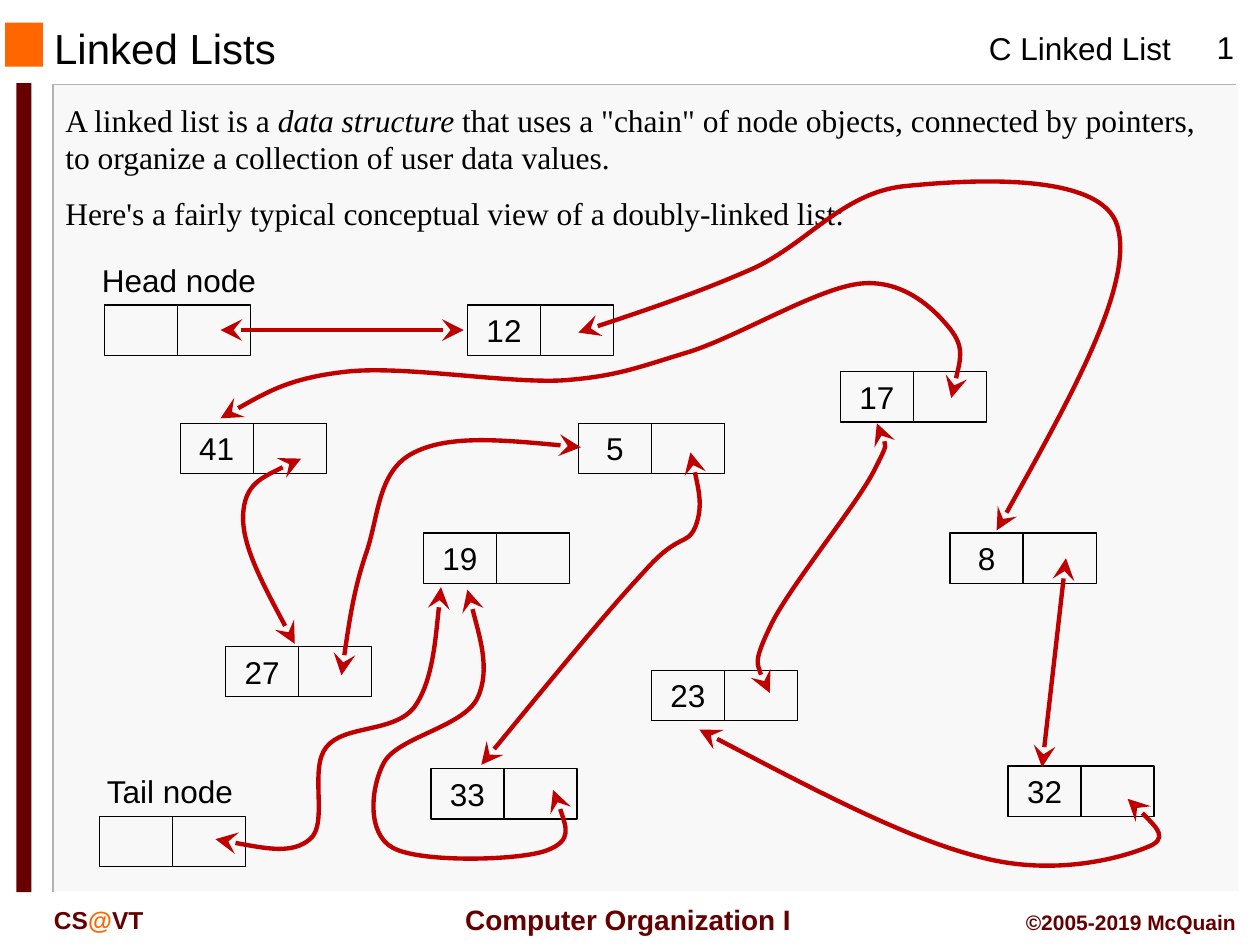
from dataclasses import dataclass

import lxml.etree
import pptx
import pptx.dml.color
import pptx.enum.shapes
import pptx.enum.text
import pptx.oxml.ns
import pptx.util

Inches = pptx.util.Inches
Align = pptx.enum.text.PP_ALIGN
Anchor = pptx.enum.text.MSO_ANCHOR
Rectangle = pptx.enum.shapes.MSO_SHAPE.RECTANGLE
Point = tuple[float, float]


@dataclass(frozen=True)
class Theme:
    sans: str = "Arial"
    serif: str = "Times New Roman"
    ink: str = "000000"
    maroon: str = "660000"
    orange: str = "FF6600"
    panel: str = "F8F8F8"
    shade: str = "B2B2B2"
    light: str = "FFFFFF"
    pointer: str = "C00000"
    title_size: float = 24
    body_size: float = 18
    course_size: float = 16
    school_size: float = 14
    credit_size: float = 12
    cell_line: float = 0.75
    frame_line: float = 1
    pointer_line: float = 2.5


@dataclass(frozen=True)
class Run:
    text: str
    color: str | None = None
    italic: bool = False


@dataclass(frozen=True)
class Node:
    left: float
    top: float
    value: str = ""


@dataclass(frozen=True)
class Caption:
    text: str
    left: float
    top: float


THEME = Theme()
CELL_WIDTH, CELL_HEIGHT = 0.58, 0.4

SENTINELS = [
    (Node(0.83, 2.42), Caption("Head node", 0.71, 2.02)),
    (Node(0.79, 6.48), Caption("Tail node", 0.75, 6.08)),
]
NODES = [
    Node(1.43, 3.36, "41"), Node(8, 6.08, "32"), Node(6.67, 2.95, "17"),
    Node(3.36, 4.23, "19"), Node(3.71, 2.42, "12"), Node(3.42, 6.1, "33"),
    Node(4.59, 3.36, "5"), Node(5.17, 5.32, "23"), Node(7.54, 4.23, "8"),
    Node(1.79, 5.13, "27"),
]
STRAIGHT_POINTERS = [((1.75, 2.62), (3.68, 2.62)), ((8.46, 4.43), (8.27, 6.09))]
# Each curve is a start point, then two control points and an end point per segment.
CURVED_POINTERS = {
    "12 to 8": [(4.59, 2.64), (5.07, 2.48), (5.55, 2.32), (5.98, 2.13),
                (6.41, 1.93), (6.68, 1.54), (7.16, 1.48), (7.64, 1.43),
                (8.75, 1.35), (8.87, 1.8), (9, 2.26), (8.45, 3.24), (7.91, 4.21)],
    "32 to 23": [(8.95, 6.34), (9.12, 6.5), (9.29, 6.66), (9.09, 6.73),
                 (8.89, 6.81), (8.36, 6.96), (7.77, 6.8), (7.18, 6.65),
                 (6.37, 6.22), (5.55, 5.79)],
    "23 to 17": [(6.11, 5.5), (6.04, 5.39), (5.97, 5.27), (6.11, 4.98),
                 (6.24, 4.69), (6.79, 4.02), (6.93, 3.75), (7.07, 3.48),
                 (7.02, 3.42), (6.96, 3.36)],
    "17 to 41": [(7.55, 3.16), (7.6, 2.96), (7.66, 2.76), (7.54, 2.61),
                 (7.42, 2.46), (7.18, 2.22), (6.84, 2.25), (6.5, 2.28),
                 (5.88, 2.66), (5.48, 2.79), (5.08, 2.91), (4.9, 2.99),
                 (4.45, 3.02), (3.99, 3.04), (3.2, 2.9), (2.75, 2.95),
                 (2.3, 3), (2.03, 3.16), (1.75, 3.32)],
    "41 to 27": [(2.39, 3.64), (2.17, 3.74), (1.94, 3.84), (1.93, 4.09),
                 (1.92, 4.33), (2.13, 4.72), (2.34, 5.11)],
    "27 to 5": [(2.71, 5.36), (2.76, 5.01), (2.81, 4.67), (2.91, 4.38),
                (3.01, 4.08), (3, 3.73), (3.29, 3.59), (3.57, 3.45),
                (4.09, 3.5), (4.61, 3.55)],
    "5 to 33": [(5.48, 3.59), (5.53, 3.8), (5.58, 4.02), (5.52, 4.18),
                (5.45, 4.34), (5.39, 4.22), (5.11, 4.54), (4.82, 4.85),
                (4.32, 5.46), (3.82, 6.07)],
    "33 to 19": [(4.39, 6.27), (4.47, 6.47), (4.55, 6.67), (4.34, 6.75),
                 (4.13, 6.83), (3.34, 6.85), (3.12, 6.73), (2.91, 6.62),
                 (2.94, 6.25), (3.05, 6.05), (3.16, 5.85), (3.68, 5.77),
                 (3.79, 5.54), (3.9, 5.31), (3.71, 4.68), (3.71, 4.68)],
    "tail to 19": [(1.71, 6.66), (2.02, 6.72), (2.32, 6.78), (2.46, 6.66),
                   (2.61, 6.54), (2.45, 6.1), (2.59, 5.93), (2.73, 5.75),
                   (3.13, 5.82), (3.29, 5.61), (3.44, 5.4), (3.5, 4.66), (3.5, 4.66)],
}


def rgb(color: str):
    return pptx.dml.color.RGBColor.from_string(color)


def write(shape, *paragraphs: list[Run], size: float = THEME.body_size,
          font: str = THEME.sans, color: str = THEME.ink, bold: bool = False,
          align=Align.LEFT, anchor=Anchor.TOP, wrap: bool = True, gap: float = 0) -> None:
    """Fill a shape with paragraphs of runs; gap is the space between paragraphs."""
    frame = shape.text_frame
    frame.word_wrap = wrap
    frame.auto_size = pptx.enum.text.MSO_AUTO_SIZE.NONE
    frame.vertical_anchor = anchor
    for index, runs in enumerate(paragraphs):
        paragraph = frame.add_paragraph() if index else frame.paragraphs[0]
        paragraph.alignment = align
        paragraph.space_before = pptx.util.Pt(gap if index else 0)
        for part in runs:
            run = paragraph.add_run()
            run.text = part.text
            run.font.name, run.font.size = font, pptx.util.Pt(size)
            run.font.bold, run.font.italic = bold, part.italic
            run.font.color.rgb = rgb(part.color or color)


def add_label(shapes, box: tuple, *paragraphs: list[Run], **text_format) -> None:
    write(shapes.add_textbox(*map(Inches, box)), *paragraphs, **text_format)


def set_line(shape, color: str, width: float) -> None:
    shape.line.color.rgb = rgb(color)
    shape.line.width = pptx.util.Pt(width)


def add_block(shapes, box: tuple, fill: str | None = None):
    block = shapes.add_shape(Rectangle, *map(Inches, box))
    block.shadow.inherit = False
    if fill:
        block.fill.solid()
        block.fill.fore_color.rgb = rgb(fill)
        block.line.fill.background()
    else:
        block.fill.background()
        set_line(block, THEME.ink, THEME.cell_line)
    return block


def add_outline(shapes, points: list[Point], color: str, width: float):
    start, *rest = [(Inches(x), Inches(y)) for x, y in points]
    builder = shapes.build_freeform(*start)
    builder.add_line_segments(rest, close=False)
    outline = builder.convert_to_shape()
    outline.shadow.inherit = False
    outline.fill.background()
    set_line(outline, color, width)
    return outline


def add_arrowheads(shape) -> None:
    line = shape.element.spPr.get_or_add_ln()
    for end in ("a:headEnd", "a:tailEnd"):
        lxml.etree.SubElement(line, pptx.oxml.ns.qn(end), type="stealth", w="lg", len="lg")


def add_straight_pointer(shapes, start: Point, end: Point) -> None:
    pointer = shapes.add_connector(pptx.enum.shapes.MSO_CONNECTOR.STRAIGHT,
                                   *map(Inches, (*start, *end)))
    set_line(pointer, THEME.pointer, THEME.pointer_line)
    add_arrowheads(pointer)
    lxml.etree.SubElement(pointer.element.spPr, pptx.oxml.ns.qn("a:effectLst"))


def add_curved_pointer(shapes, points: list[Point]) -> None:
    """Turn every three line segments of an outline into one Bézier segment."""
    pointer = add_outline(shapes, points, THEME.pointer, THEME.pointer_line)
    segments = list(pointer.element.iter(pptx.oxml.ns.qn("a:lnTo")))
    route = segments[0].getparent()
    for first in range(0, len(segments), 3):
        bezier = lxml.etree.SubElement(route, pptx.oxml.ns.qn("a:cubicBezTo"))
        for segment in segments[first:first + 3]:
            bezier.append(segment[0])
            route.remove(segment)
    add_arrowheads(pointer)


def add_node(shapes, node: Node, caption: Caption | None = None) -> None:
    group = shapes.add_group_shape().shapes
    for column, text in enumerate((node.value, "")):
        cell = add_block(group, (node.left + column * CELL_WIDTH, node.top,
                                 CELL_WIDTH, CELL_HEIGHT))
        if text:
            write(cell, [Run(text)], align=Align.CENTER)
    if caption:
        add_label(group, (caption.left, caption.top, 1.58, 0.4), [Run(caption.text)])


def add_frame(shapes) -> None:
    add_block(shapes, (0.43, 0.67, 9.4, 6.41), THEME.panel)
    add_outline(shapes, [(9.81, 0.67), (0.42, 0.67), (0.42, 7.08)], THEME.shade, THEME.frame_line)
    add_outline(shapes, [(9.83, 0.67), (9.83, 7.08), (0.44, 7.08)], THEME.light, THEME.frame_line)
    add_block(shapes, (0.04, 0.18, 0.3, 0.35), THEME.orange)
    add_block(shapes, (0.13, 0.66, 0.12, 6.42), THEME.maroon)
    add_label(shapes, (7.75, 0.18, 1.66, 0.4), [Run("C Linked List")], wrap=False)
    add_label(shapes, (9.39, 0.17, 0.67, 0.4), [Run("1")], align=Align.CENTER)
    add_label(shapes, (3.53, 7.11, 2.91, 0.37), [Run("Computer Organization I")],
              size=THEME.course_size, color=THEME.maroon, bold=True,
              align=Align.CENTER, anchor=Anchor.MIDDLE, wrap=False)
    add_label(shapes, (0.33, 7.13, 1.5, 0.33), [Run("CS"), Run("@", THEME.orange), Run("VT")],
              size=THEME.school_size, color=THEME.maroon, bold=True)
    add_label(shapes, (7.83, 7.17, 2.08, 0.3), [Run("©2005-2019 McQuain")],
              size=THEME.credit_size, color=THEME.maroon, bold=True, align=Align.RIGHT)


def main() -> None:
    deck = pptx.Presentation()
    deck.slide_width, deck.slide_height = Inches(10), Inches(7.5)
    slide = deck.slides.add_slide(deck.slide_layouts[5])
    shapes = slide.shapes
    add_frame(shapes)
    title = shapes.title
    title.left, title.top, title.width, title.height = map(Inches, (0.33, 0.19, 6.33, 0.38))
    write(title, [Run("Linked Lists")], size=THEME.title_size, anchor=Anchor.MIDDLE)
    add_label(shapes, (0.42, 0.75, 9.42, 1.16),
              [Run("A linked list is a "), Run("data structure", italic=True),
               Run(' that uses a "chain" of node objects, connected by pointers, '
                   "to organize a collection of user data values.")],
              [Run("Here's a fairly typical conceptual view of a doubly-linked list:")],
              font=THEME.serif, gap=10)
    for node, caption in SENTINELS:
        add_node(shapes, node, caption)
    for node in NODES:
        add_node(shapes, node)
    for start, end in STRAIGHT_POINTERS:
        add_straight_pointer(shapes, start, end)
    for points in CURVED_POINTERS.values():
        add_curved_pointer(shapes, points)
    deck.save("out.pptx")


if __name__ == "__main__":
    main()
